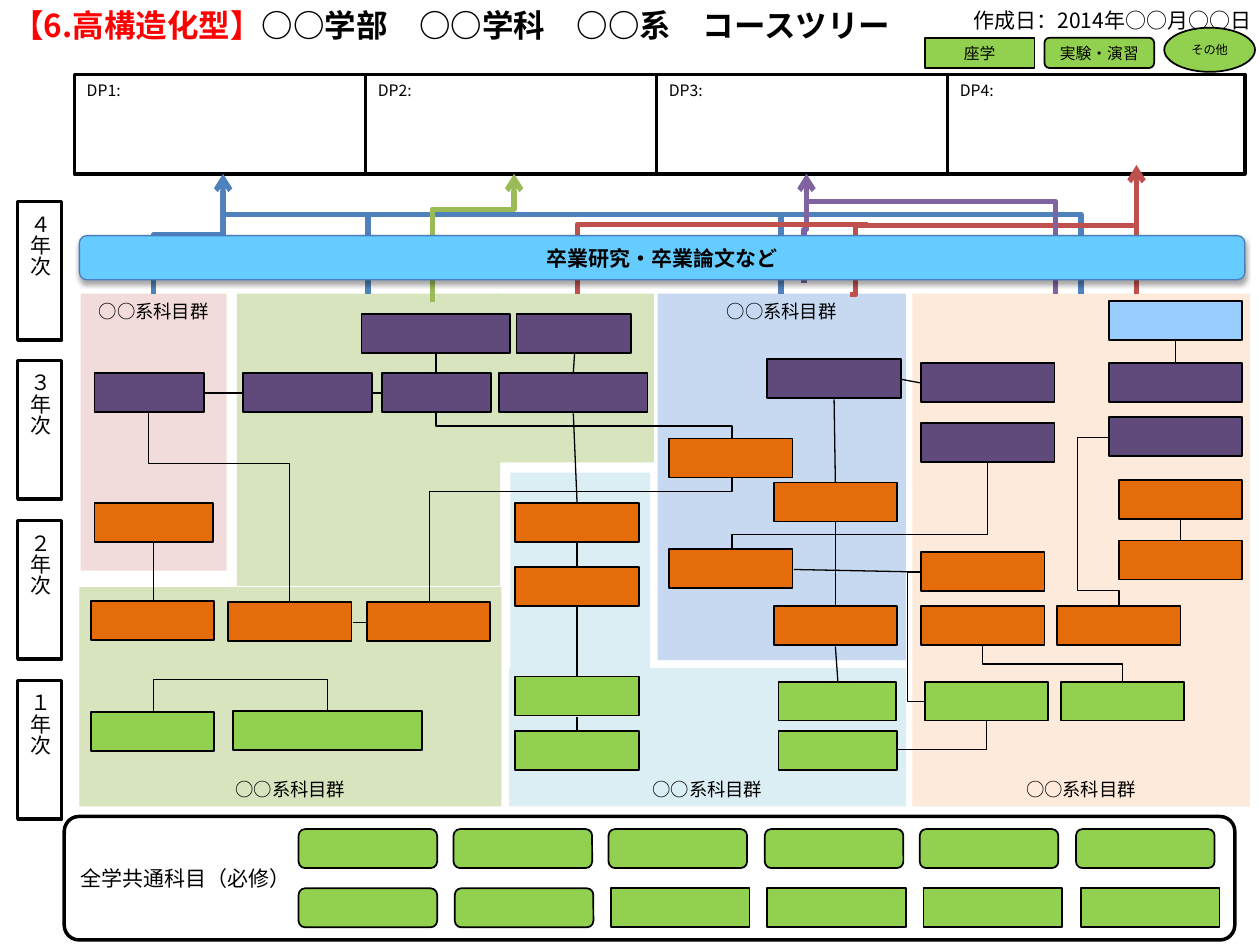
from lxml import etree
from pptx import Presentation
from pptx.dml.color import RGBColor
from pptx.enum.shapes import MSO_CONNECTOR, MSO_SHAPE
from pptx.enum.text import MSO_ANCHOR, MSO_AUTO_SIZE, PP_ALIGN
from pptx.oxml.ns import qn
from pptx.util import Pt

PX = 9144  # EMU per px, 100 px to the inch
FONT = "Noto Sans CJK JP"
RECT, ROUND, OVAL = MSO_SHAPE.RECTANGLE, MSO_SHAPE.ROUNDED_RECTANGLE, MSO_SHAPE.OVAL
STRAIGHT, ELBOW = MSO_CONNECTOR.STRAIGHT, MSO_CONNECTOR.ELBOW
TOP, MIDDLE, BOTTOM = MSO_ANCHOR.TOP, MSO_ANCHOR.MIDDLE, MSO_ANCHOR.BOTTOM
LEFT, CENTER, RIGHT = PP_ALIGN.LEFT, PP_ALIGN.CENTER, PP_ALIGN.RIGHT
FIT = MSO_AUTO_SIZE.SHAPE_TO_FIT_TEXT

COLORS = {
    "black": "000000", "white": "FFFFFF", "red": "FF0000",
    "aqua zone": "DBEEF4", "green zone": "D7E4BD", "peach zone": "FDEADA",
    "pink zone": "F2DCDB", "blue zone": "C6D9F1",
    "lime": "92D050", "orange": "E46C0A", "purple": "604A7B", "sky": "99CCFF",
    "banner": "66CCFF", "banner edge": "4B7EBC",
    "DP1": "4F81BD", "DP2": "9BBB59", "DP3": "8064A2", "DP4": "C0504D",
}


class CourseTree:
    """Holds the style and the current slide."""

    def __init__(self, slide):
        self.shapes = slide.shapes

    def color(self, name):
        return RGBColor.from_string(COLORS[name])

    def add_text(self, shape, runs, size, align, anchor, bold=False, wrap=True):
        """Fill a shape with one paragraph of (text, colour) runs."""
        frame = shape.text_frame
        frame.word_wrap = wrap
        frame.vertical_anchor = anchor
        paragraph = frame.paragraphs[0]
        paragraph.alignment = align
        for text, color in runs:
            run = paragraph.add_run()
            run.text = text
            run.font.size = Pt(size)
            run.font.bold = bold
            run.font.color.rgb = self.color(color)
            run.font.name = FONT
            etree.SubElement(run.font._element, qn("a:ea"), typeface=FONT)

    def label(self, box, runs, size, align, anchor, bold=False, wrap=True):
        shape = self.shapes.add_textbox(*(value * PX for value in box))
        self.add_text(shape, runs, size, align, anchor, bold, wrap)
        shape.text_frame.auto_size = FIT

    def box(self, box, fill, line=None, width=1, kind=RECT, text=None, size=12,
            align=CENTER, anchor=MIDDLE, bold=False):
        shape = self.shapes.add_shape(kind, *(value * PX for value in box))
        shape.shadow.inherit = False
        shape.fill.solid()
        shape.fill.fore_color.rgb = self.color(fill)
        if line:
            shape.line.color.rgb = self.color(line)
            shape.line.width = Pt(width)
        else:
            shape.line.fill.background()
        if text:
            self.add_text(shape, [(text, "black")], size, align, anchor, bold)
        return shape

    def zone(self, box, fill, anchor=None):
        text = "○○系科目群" if anchor is not None else None
        self.box(box, fill, text=text, size=10.5, anchor=anchor)

    def course(self, left, top, width, fill, kind=RECT):
        self.box((left, top, width, 31), fill, "black", kind=kind)

    def year(self, top, text):
        shape = self.box((14, top, 35, 110), "white", "black", 2, text=text)
        shape.text_frame._txBody.bodyPr.set("vert", "eaVert")

    def drop_shadow(self, shape):
        effects = shape._element.spPr.find(qn("a:effectLst"))
        shadow = etree.SubElement(effects, qn("a:outerShdw"), blurRad="39400",
                                  dist="22900", dir="5400000", rotWithShape="0")
        color = etree.SubElement(shadow, qn("a:srgbClr"), val=COLORS["black"])
        etree.SubElement(color, qn("a:alpha"), val="35000")

    def link(self, *points, color="black", width=0.75, arrow=False):
        """Join points by a straight line, or by an elbow with right-angled bends."""
        (x1, y1), (x2, y2) = points[0], points[-1]
        bends = len(points) - 2
        vertical = bends > 0 and points[1][0] == x1
        ends = (x1, y1, x2, y2)
        if vertical:  # a quarter turn about the middle makes the first leg vertical
            middle_x, middle_y = (x1 + x2) / 2, (y1 + y2) / 2
            half_w, half_h = (y2 - y1) / 2, (x1 - x2) / 2
            ends = (middle_x - half_w, middle_y - half_h,
                    middle_x + half_w, middle_y + half_h)
        connector = self.shapes.add_connector(
            ELBOW if bends else STRAIGHT, *(round(value * PX) for value in ends))
        properties = connector._element.spPr
        if vertical:
            properties.find(qn("a:xfrm")).set("rot", "5400000")
        if bends:
            geometry = properties.find(qn("a:prstGeom"))
            geometry.set("prst", f"bentConnector{bends + 1}")
            guides = geometry.find(qn("a:avLst"))
            for number in range(1, bends):
                axis = (number + vertical + 1) % 2
                start, end = points[0][axis], points[-1][axis]
                ratio = (points[number][axis] - start) / (end - start)
                etree.SubElement(guides, qn("a:gd"), name=f"adj{number}",
                                 fmla=f"val {round(ratio * 100000)}")
        connector.line.color.rgb = self.color(color)
        connector.line.width = Pt(width)
        if arrow:
            etree.SubElement(connector.line._get_or_add_ln(), qn("a:tailEnd"), type="arrow")
        etree.SubElement(properties, qn("a:effectLst"))


ZONES = [
    ((405, 375, 111, 155), "aqua zone", None), ((63, 466, 335, 174), "green zone", BOTTOM),
    ((188, 233, 209, 232), "green zone", None), ((393, 233, 126, 134), "green zone", None),
    ((404, 530, 315, 110), "aqua zone", BOTTOM), ((724, 233, 268, 407), "peach zone", BOTTOM),
    ((64, 233, 116, 220), "pink zone", TOP), ((522, 233, 197, 291), "blue zone", TOP),
]
# fill: (left, top, width)
COURSES = {
    "sky": [(880, 239, 106)],
    "purple": [(287, 249, 118), (410, 249, 91), (75, 296, 87), (193, 296, 102),
               (303, 296, 87), (396, 296, 118), (609, 285, 106), (731, 288, 106),
               (731, 336, 106), (880, 288, 106), (880, 331, 106)],
    "orange": [(75, 399, 94), (72, 477, 98), (181, 478, 98), (291, 478, 98),
               (409, 399, 98), (409, 450, 98), (531, 348, 98), (614, 383, 98),
               (531, 436, 98), (614, 481, 98), (731, 481, 98), (839, 481, 98),
               (731, 438, 98), (888, 429, 98), (888, 381, 98)],
    "lime": [(72, 565, 98), (185, 564, 150), (409, 537, 98), (409, 580, 98),
             (618, 580, 94), (618, 541, 93), (734, 541, 98), (842, 541, 98)],
}
COURSE_LINKS = [
    [(122, 565), (122, 539), (260, 539), (260, 564)],
    [(122, 477), (122, 430)],
    [(280, 494), (291, 494)],
    [(118, 328), (118, 368), (230, 368), (230, 478)],
    [(161, 312), (193, 312)],
    [(295, 312), (303, 312)],
    [(456, 281), (455, 296)],
    [(346, 281), (346, 296)],
    [(455, 328), (458, 399)],
    [(458, 430), (458, 450)],
    [(458, 481), (458, 537)],
    [(458, 569), (458, 580)],
    [(341, 478), (341, 390), (581, 390), (581, 379)],
    [(581, 348), (581, 338), (346, 338), (346, 328)],
    [(663, 513), (665, 541)],
    [(663, 414), (663, 481)],
    [(662, 317), (663, 383)],
    [(715, 301), (731, 304)],
    [(933, 270), (933, 288)],
    [(937, 412), (937, 429)],
    [(880, 347), (855, 347), (855, 469), (888, 469), (888, 481)],
    [(712, 595), (783, 595), (783, 572)],
    [(891, 541), (891, 527), (780, 527), (780, 513)],
    [(734, 557), (720, 557), (720, 454), (731, 454)],
    [(630, 452), (731, 454)],
    [(581, 436), (581, 424), (784, 424), (784, 367)],
]
# goal, ends in an arrowhead, points
GOAL_LINKS = [
    ("DP1", True, [(122, 233), (122, 186), (177, 186), (177, 138)]),
    ("DP1", False, [(292, 233), (292, 170), (177, 170)]),
    ("DP1", False, [(620, 233), (620, 170), (287, 170)]),
    ("DP1", False, [(858, 233), (858, 170), (602, 170)]),
    ("DP2", True, [(343, 240), (343, 166), (408, 166), (408, 138)]),
    ("DP4", False, [(675, 234), (679, 234), (679, 179), (902, 179)]),
    ("DP3", True, [(638, 225), (638, 182), (640, 182), (640, 138)]),
    ("DP3", False, [(838, 233), (838, 160), (642, 160)]),
    ("DP4", True, [(902, 233), (902, 131)]),
    ("DP4", False, [(458, 233), (458, 178), (689, 178)]),
]
LEGEND = [
    ((734, 30, 87, 24), RECT, "座学", 9),
    ((829, 30, 87, 24), ROUND, "実験・演習", 9),
    ((924, 22, 72, 35), OVAL, "その他", 7),
]


def main():
    presentation = Presentation()
    presentation.slide_width, presentation.slide_height = 1000 * PX, 750 * PX
    tree = CourseTree(presentation.slides.add_slide(presentation.slide_layouts[6]))

    tree.label((756, 1, 247, 30), [("作成日：2014年○○月○○日", "black")], 12, RIGHT, TOP,
               wrap=False)
    for index in range(4):
        tree.box((59 + 231 * index, 59, 236, 79), "white", "black", 2,
                 text=f"DP{index + 1}:", size=9, align=LEFT, anchor=TOP)
    common = tree.box((51, 648, 929, 98), "white", "black", 2, ROUND,
                      "全学共通科目（必修）", align=LEFT)
    common.adjustments[0] = 0.12
    for index, digit in enumerate("４３２１"):
        tree.year(160 + 380 * index // 3, f"{digit}年次")

    # two rows of common subjects: top, last left edge, number of rounded boxes
    for top, last, rounded in [(658, 854, 6), (705, 858, 2)]:
        for index in range(6):
            left = 237 + (last - 237) * index // 5
            tree.course(left, top, 110, "lime", ROUND if index < rounded else RECT)

    for zone in ZONES:
        tree.zone(*zone)
    for fill, places in COURSES.items():
        for place in places:
            tree.course(*place, fill)
    for points in COURSE_LINKS:
        tree.link(*points)
    for goal, arrow, points in GOAL_LINKS:
        tree.link(*points, color=goal, width=3, arrow=arrow)

    banner = tree.box((63, 187, 925, 35), "banner", "banner edge", 0.75, ROUND,
                      "卒業研究・卒業論文など", bold=True)
    tree.drop_shadow(banner)
    for box, kind, text, size in LEGEND:
        tree.box(box, "lime", "black", kind=kind, text=text, size=size)
    tree.label((0, 0, 839, 40), [("【6.高構造化型】", "red"),
                                 ("○○学部　○○学科　○○系　コースツリー", "black")],
               18, LEFT, MIDDLE, bold=True)
    presentation.save("out.pptx")


if __name__ == "__main__":
    main()
